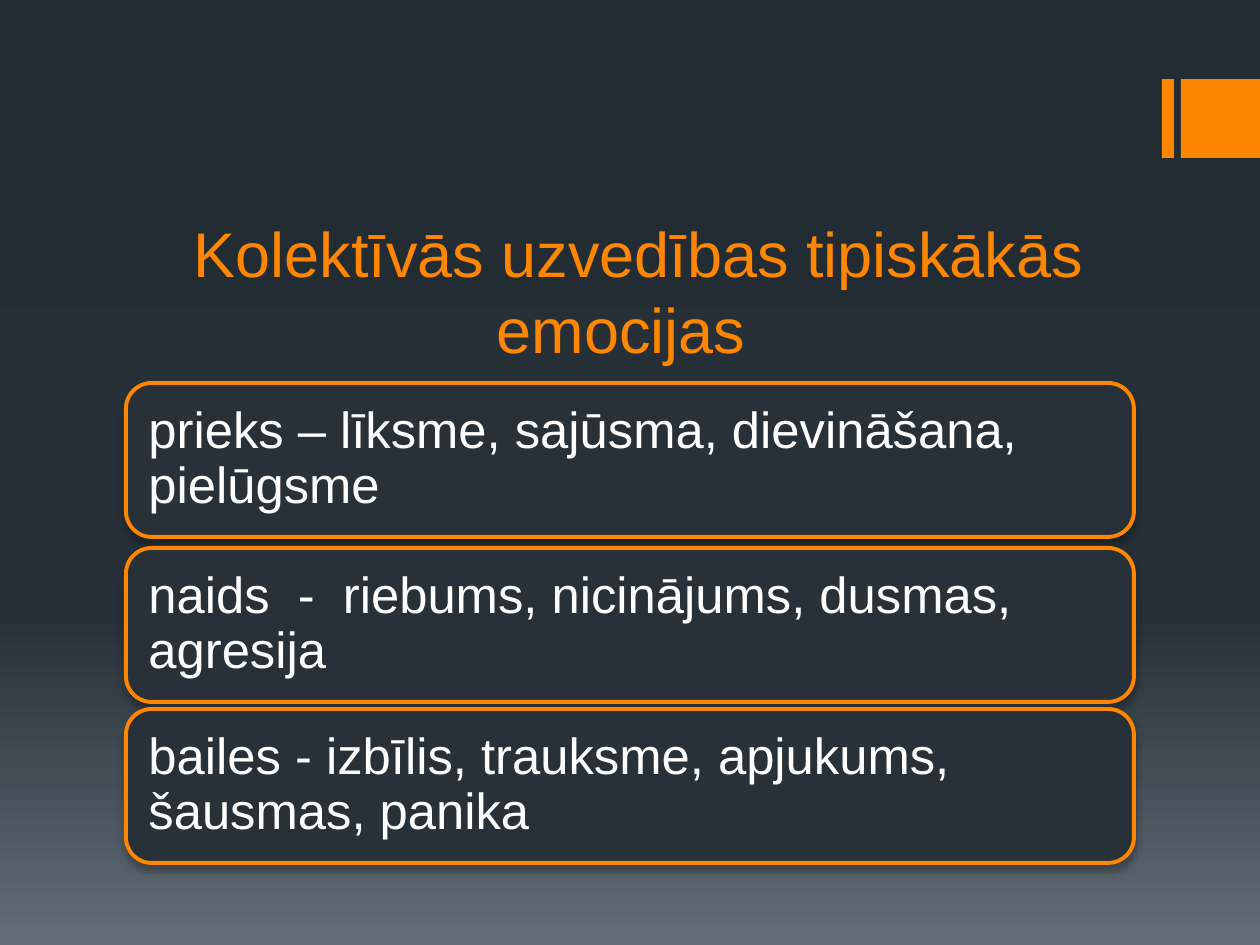
from lxml.etree import SubElement
from pptx import Presentation
from pptx.dml.color import RGBColor
from pptx.enum.shapes import MSO_SHAPE
from pptx.enum.text import MSO_ANCHOR, PP_ALIGN
from pptx.oxml import parse_xml
from pptx.oxml.ns import nsdecls, qn
from pptx.util import Inches, Pt

SCALE = Inches(1) / 126
COLORS = {
    "accent": "FF8600",
    "card": "283138",
    "text": "FFFFFF",
    "shadow": "000000",
    "bg_top": "242C33",
    "bg_middle": "273037",
    "bg_bottom": "636D76",
}
EMOTIONS = [
    (383, "prieks – līksme, sajūsma, dievināšana, pielūgsme"),
    (548, "naids  -  riebums, nicinājums, dusmas, agresija"),
    (709, "bailes - izbīlis, trauksme, apjukums, šausmas, panika"),
]


def px(n):
    return round(n * SCALE)


def rgb(name):
    return RGBColor.from_string(COLORS[name])


class Deck:
    font = "Arial"

    def __init__(self, width, height):
        self.prs = Presentation()
        self.prs.slide_width, self.prs.slide_height = px(width), px(height)
        self.slide = self.prs.slides.add_slide(self.prs.slide_layouts[6])

    def background(self, stops):
        """Fill the slide from top to bottom with (percent, color) stops."""
        fill = self.slide.background.fill
        fill.gradient()
        fill.gradient_angle = 270
        gs_lst = fill._fill._gradFill.find(qn("a:gsLst"))
        for gs in list(gs_lst):
            gs_lst.remove(gs)
        for percent, color in stops:
            gs = SubElement(gs_lst, qn("a:gs"), pos=str(percent * 1000))
            SubElement(gs, qn("a:srgbClr"), val=COLORS[color])

    def shape(self, kind, x, y, w, h, fill):
        sp = self.slide.shapes.add_shape(kind, px(x), px(y), px(w), px(h))
        sp.shadow.inherit = False
        sp.fill.solid()
        sp.fill.fore_color.rgb = rgb(fill)
        sp.line.fill.background()
        return sp

    def set_text(self, sp, text, size, color, align, anchor):
        tf = sp.text_frame
        tf.word_wrap = True
        tf.vertical_anchor = anchor
        p = tf.paragraphs[0]
        p.text = text
        p.alignment = align
        font = p.runs[0].font
        font.name, font.size, font.color.rgb = self.font, Pt(size), rgb(color)
        return tf

    def title(self, text, x, y, w, h):
        sp = self.slide.shapes.add_textbox(px(x), px(y), px(w), px(h))
        self.set_text(sp, text, 36, "accent", PP_ALIGN.CENTER, MSO_ANCHOR.BOTTOM)

    def card(self, text, x, y, w, h):
        sp = self.shape(MSO_SHAPE.ROUNDED_RECTANGLE, x, y, w, h, "card")
        sp.line.color.rgb = rgb("accent")
        sp.line.width = Pt(2.25)
        self.drop_shadow(sp)
        tf = self.set_text(sp, text, 29, "text", PP_ALIGN.LEFT, MSO_ANCHOR.MIDDLE)
        tf.margin_left = tf.margin_right = px(15)
        tf.margin_top = tf.margin_bottom = px(15)
        tf.paragraphs[0].line_spacing = 0.9

    def drop_shadow(self, sp):
        effects = sp._element.spPr.find(qn("a:effectLst"))
        effects.append(parse_xml(
            f'<a:outerShdw {nsdecls("a")} blurRad="{Pt(4)}" dist="{Pt(3)}" '
            f'dir="5400000" rotWithShape="0"><a:srgbClr val="{COLORS["shadow"]}">'
            '<a:alpha val="28000"/></a:srgbClr></a:outerShdw>'))


def main():
    deck = Deck(1260, 945)
    deck.background([(0, "bg_top"), (65, "bg_middle"), (100, "bg_bottom")])
    for x, w in [(1162, 12), (1181, 79)]:
        deck.shape(MSO_SHAPE.RECTANGLE, x, 79, w, 79, "accent")
    deck.title(" Kolektīvās uzvedības tipiskākās emocijas ", 126, 213, 1008, 159)
    for y, text in EMOTIONS:
        deck.card(text, 126, y, 1008, 154)
    deck.prs.save("out.pptx")


if __name__ == "__main__":
    main()
